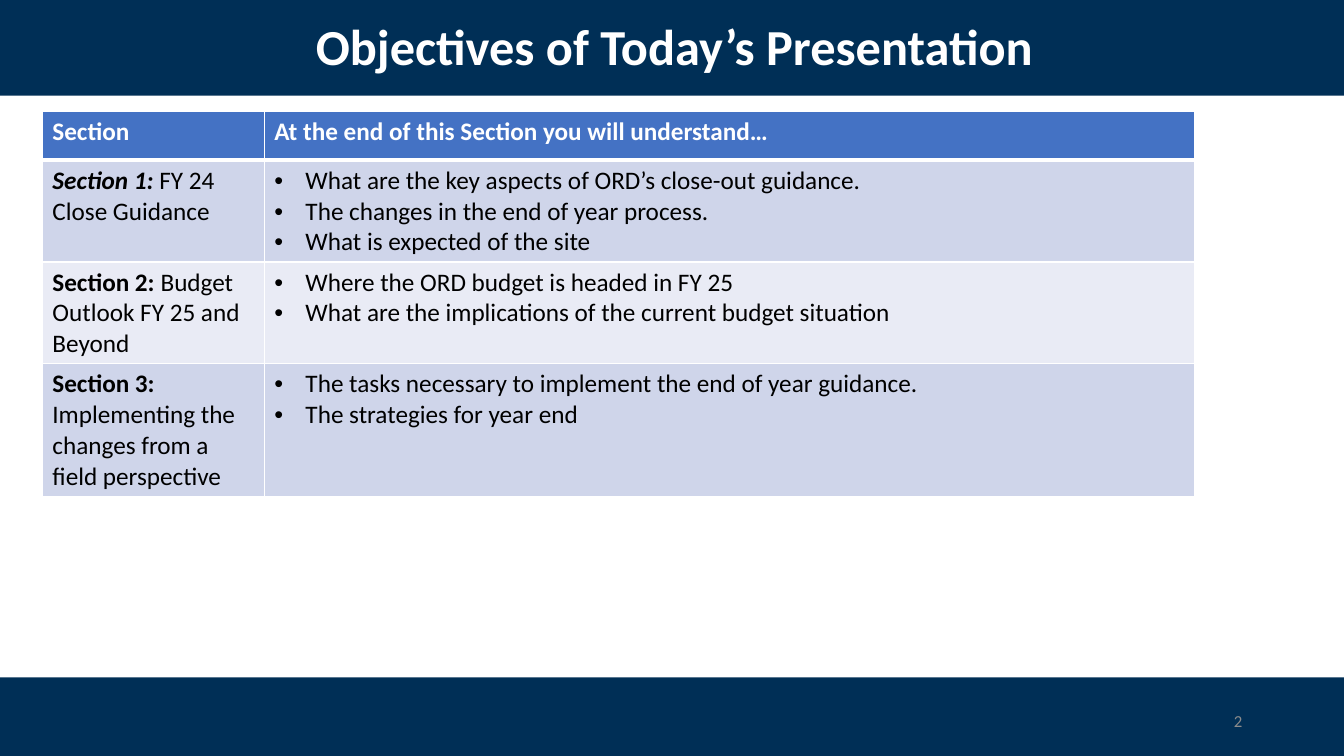
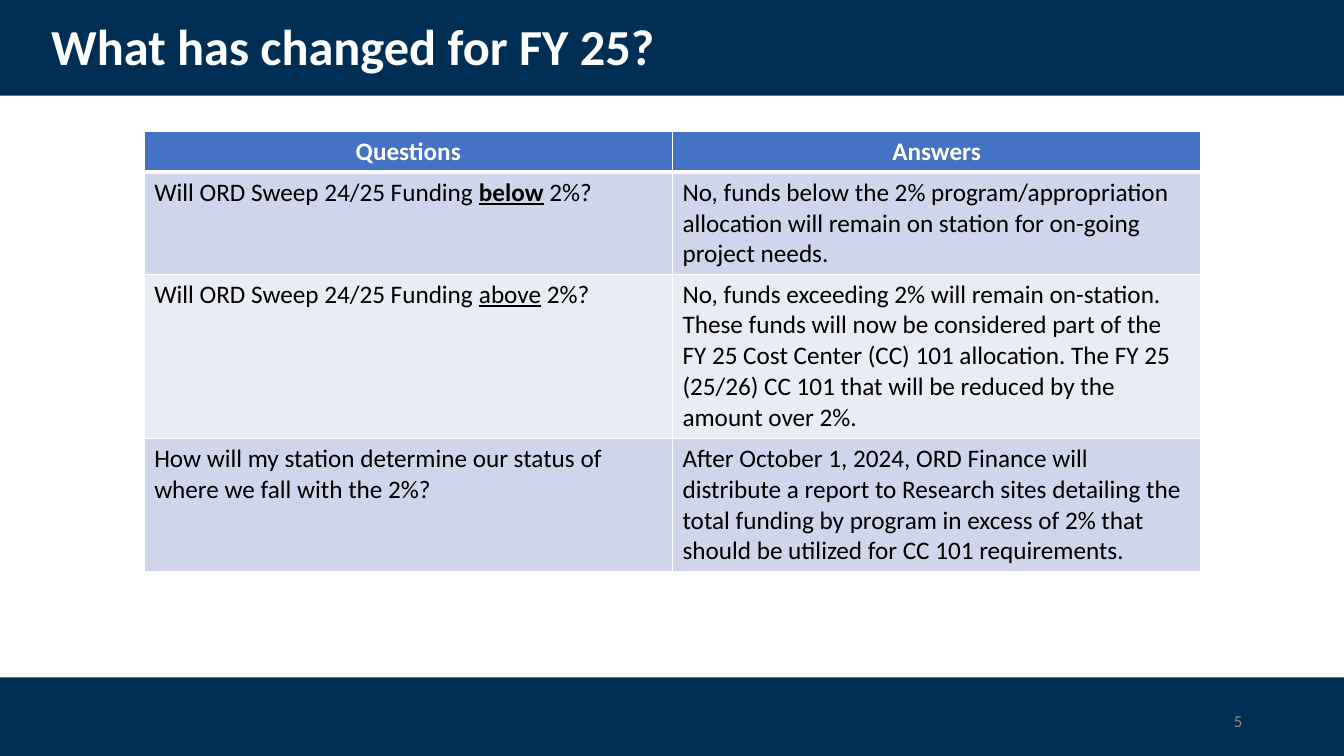
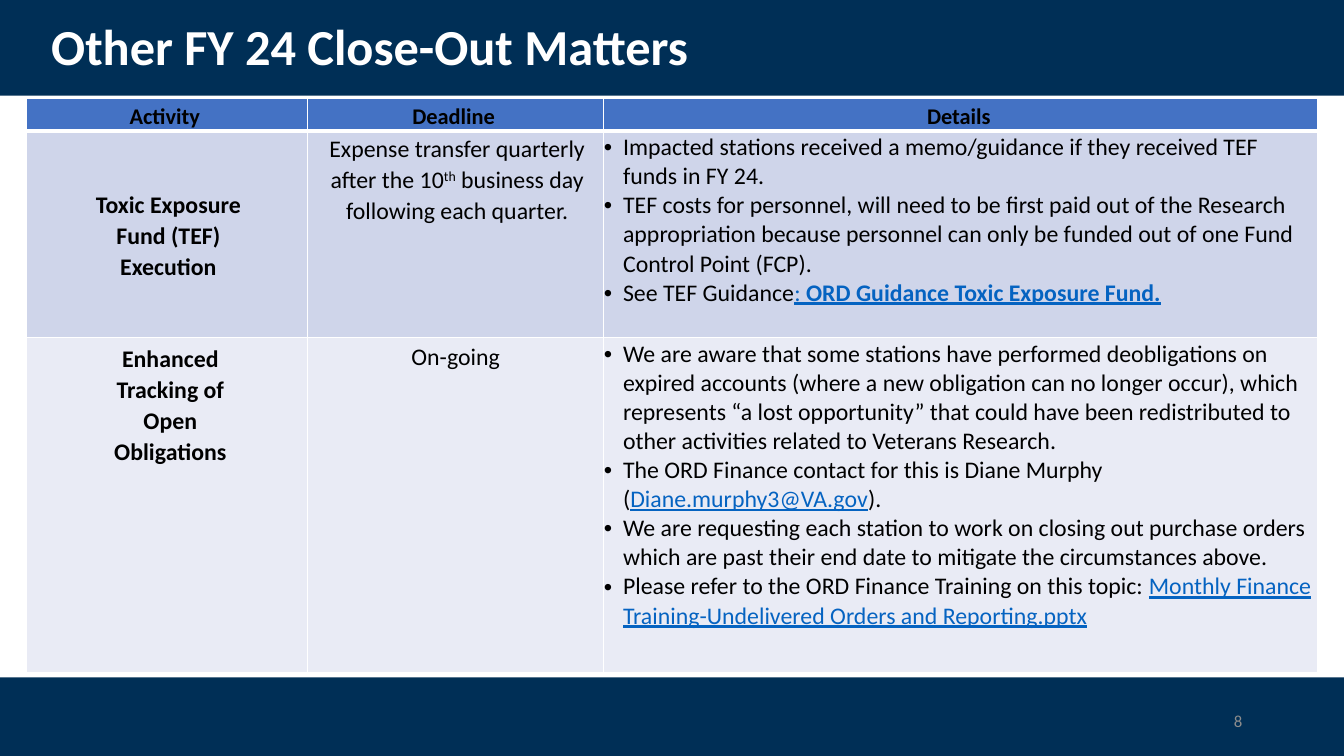
from dataclasses import dataclass, replace

from lxml import etree
from pptx import Presentation
from pptx.dml.color import RGBColor
from pptx.enum.shapes import MSO_SHAPE
from pptx.enum.text import MSO_ANCHOR, PP_ALIGN
from pptx.oxml.ns import qn
from pptx.util import Inches, Pt

RECTANGLE = MSO_SHAPE.RECTANGLE
TOP, MIDDLE = MSO_ANCHOR.TOP, MSO_ANCHOR.MIDDLE
LEFT, CENTER, RIGHT = PP_ALIGN.LEFT, PP_ALIGN.CENTER, PP_ALIGN.RIGHT

NAVY = RGBColor(0x00, 0x2F, 0x56)
HEADER_BLUE = RGBColor(0x44, 0x72, 0xC4)
BAND_DARK = RGBColor(0xCF, 0xD5, 0xEA)
BAND_LIGHT = RGBColor(0xE9, 0xEB, 0xF5)
LINK_BLUE = RGBColor(0x05, 0x63, 0xC1)
GRAY = RGBColor(0x8C, 0x8C, 0x8C)
WHITE = RGBColor(0xFF, 0xFF, 0xFF)
BLACK = RGBColor(0x00, 0x00, 0x00)

FONT = "Calibri"
SLIDE_WIDTH, SLIDE_HEIGHT = 13.33, 7.5
TITLE_BAND = (0, 0, SLIDE_WIDTH, 0.95)
FOOTER_BAND = (0, 6.72, SLIDE_WIDTH, 0.8)
TITLE_BOX = (0.41, 0.15, 12.56, 0.68)
NUMBER_BOX = (9.42, 6.95, 3, 0.4)

BOLD = {"bold": True}
UNDERLINE = {"underline": True}
LINK = {"underline": True, "color": LINK_BLUE}
SUPERSCRIPT = {"baseline": 30}


@dataclass(frozen=True)
class TextStyle:
    size: float = 18
    color: RGBColor = BLACK
    bold: bool = False
    align: PP_ALIGN = LEFT
    anchor: MSO_ANCHOR = TOP
    line_spacing: float = 1.0
    indent: float = 0
    bulleted: bool = False
    margins: tuple = (0.1, 0.05, 0.1, 0.05)


TITLE = TextStyle(36, WHITE, True, anchor=MIDDLE, line_spacing=0.9)
SLIDE_NUMBER = TextStyle(12, GRAY, align=RIGHT, anchor=MIDDLE)
BODY = TextStyle()
BULLETS = TextStyle(indent=0.31, bulleted=True)
HEADER = TextStyle(color=WHITE, bold=True)
TIGHT = (0, 0.02, 0.04, 0)
MATTER_HEADER = TextStyle(16, bold=True, align=CENTER, line_spacing=1.07, margins=TIGHT)
MATTER_ACTIVITY = TextStyle(17, bold=True, align=CENTER, anchor=MIDDLE,
                            line_spacing=1.07, indent=0.07, margins=TIGHT)
MATTER_DEADLINE = replace(MATTER_ACTIVITY, bold=False, anchor=TOP)
MATTER_DETAILS = TextStyle(17, indent=0.19, bulleted=True, margins=TIGHT)


def add_run(paragraph, text, style, changes):
    run = paragraph.add_run()
    run.text = text
    formats = {"name": FONT, "size": Pt(style.size), "bold": style.bold,
               "color": style.color, **changes}
    run.font.color.rgb = formats.pop("color")
    baseline = formats.pop("baseline", None)
    for attribute, value in formats.items():
        setattr(run.font, attribute, value)
    if baseline:
        run.font._element.set("baseline", str(baseline * 1000))


def write_paragraphs(frame, paragraphs, style):
    """Write paragraphs, each a string or a list of strings and (text, changes) runs."""
    for number, runs in enumerate(paragraphs):
        paragraph = frame.paragraphs[0] if number == 0 else frame.add_paragraph()
        properties = paragraph._p.get_or_add_pPr()
        properties.set("marL", str(Inches(style.indent)))
        if style.bulleted:
            properties.set("indent", str(-Inches(style.indent)))
            etree.SubElement(properties, qn("a:buFont"), typeface="Arial")
            etree.SubElement(properties, qn("a:buChar"), char="•")
        paragraph.alignment = style.align
        paragraph.line_spacing = style.line_spacing
        for run in [runs] if isinstance(runs, str) else runs:
            text, changes = (run, {}) if isinstance(run, str) else run
            add_run(paragraph, text, style, changes)


def set_margins(target, margins):
    for side, margin in zip(("left", "top", "right", "bottom"), margins):
        setattr(target, f"margin_{side}", Inches(margin))


def add_text(slide, box, text, style):
    frame = slide.shapes.add_textbox(*map(Inches, box)).text_frame
    frame.word_wrap = True
    frame.vertical_anchor = style.anchor
    set_margins(frame, style.margins)
    write_paragraphs(frame, [text], style)


def add_band(slide, box):
    band = slide.shapes.add_shape(RECTANGLE, *map(Inches, box))
    band.shadow.inherit = False
    band.fill.solid()
    band.fill.fore_color.rgb = NAVY
    band.line.fill.background()


def add_framed_slide(deck, title, number, title_align=LEFT):
    """Add a slide with the shared bands, title and slide number."""
    slide = deck.slides.add_slide(deck.slide_layouts[6])
    for box in (TITLE_BAND, FOOTER_BAND):
        add_band(slide, box)
    add_text(slide, TITLE_BOX, title, replace(TITLE, align=title_align))
    add_text(slide, NUMBER_BOX, str(number), SLIDE_NUMBER)
    return slide


def add_borders(cell, row):
    """Draw white borders, with a heavier rule under the header row."""
    widths = {"L": 1, "R": 1, "T": 3 if row == 1 else 1, "B": 3 if row == 0 else 1}
    properties = cell._tc.get_or_add_tcPr()
    for side, width in widths.items():
        line = etree.SubElement(properties, qn(f"a:ln{side}"), w=str(Pt(width)))
        fill = etree.SubElement(line, qn("a:solidFill"))
        etree.SubElement(fill, qn("a:srgbClr"), val=str(WHITE))


def add_banded_table(slide, position, widths, heights, rows):
    """Add a table from rows of (paragraphs, style) cells."""
    box = (*position, sum(widths), sum(heights))
    table = slide.shapes.add_table(len(rows), len(widths), *map(Inches, box)).table
    table.first_row = table.horz_banding = False
    for column, width in zip(table.columns, widths):
        column.width = Inches(width)
    for index, (cells, height) in enumerate(zip(rows, heights)):
        table.rows[index].height = Inches(height)
        band = BAND_DARK if index % 2 else BAND_LIGHT
        for cell, (paragraphs, style) in zip(table.rows[index].cells, cells):
            add_borders(cell, index)
            cell.fill.solid()
            cell.fill.fore_color.rgb = band if index else HEADER_BLUE
            cell.vertical_anchor = style.anchor
            set_margins(cell, style.margins)
            write_paragraphs(cell.text_frame, paragraphs, style)


def styled_rows(headings, header_style, contents, column_styles):
    """Pair headings and contents with the style of their column."""
    header = [([heading], header_style) for heading in headings]
    return [header] + [list(zip(row, column_styles)) for row in contents]


def add_objectives(deck):
    slide = add_framed_slide(deck, "Objectives of Today’s Presentation", 2, CENTER)
    sections = [
        ([[("Section 1: ", {"bold": True, "italic": True}), "FY 24 Close Guidance"]],
         ["What are the key aspects of ORD’s close-out guidance.",
          "The changes in the end of year process.",
          "What is expected of the site"]),
        ([[("Section 2: ", BOLD), "Budget Outlook FY 25 and Beyond"]],
         ["Where the ORD budget is headed in FY 25",
          "What are the implications of the current budget situation"]),
        ([[("Section 3:", BOLD), " Implementing the changes from a field perspective"]],
         ["The tasks necessary to implement the end of year guidance.",
          "The strategies for year end"]),
    ]
    headings = ["Section", "At the end of this Section you will understand…"]
    add_banded_table(slide, (0.42, 1.11), (2.2, 9.23), (0.48, 1.01, 1.01, 1.32),
                     styled_rows(headings, HEADER, sections, (BODY, BULLETS)))


def add_changes(deck):
    slide = add_framed_slide(deck, "What has changed for FY 25?", 5)
    sweep = "Will ORD Sweep 24/25 Funding "
    answers = [
        ([[sweep, ("below", {**BOLD, **UNDERLINE}), " 2%?"]],
         ["No, funds below the 2% program/appropriation allocation will remain on "
          "station for on-going project needs."]),
        ([[sweep, ("above", UNDERLINE), " 2%?"]],
         ["No, funds exceeding 2% will remain on-station. These funds will now be "
          "considered part of the FY 25 Cost Center (CC) 101 allocation. The FY 25 "
          "(25/26) CC 101 that will be reduced by the amount over 2%."]),
        (["How will my station determine our status of where we fall with the 2%?"],
         ["After October 1, 2024, ORD Finance will distribute a report to Research "
          "sites detailing the total funding by program in excess of 2% that should "
          "be utilized for CC 101 requirements."]),
    ]
    add_banded_table(slide, (1.43, 1.3), (5.24, 5.24), (0.41, 1.01, 1.63, 1.32),
                     styled_rows(["Questions", "Answers"], replace(HEADER, align=CENTER),
                                 answers, (BODY, BODY)))


def add_close_out_matters(deck):
    slide = add_framed_slide(deck, "Other FY 24 Close-Out Matters", 8)
    matters = [
        (["Toxic Exposure", "Fund (TEF)", "Execution"],
         [["Expense transfer quarterly after the 10", ("th", SUPERSCRIPT),
           " business day following each quarter."]],
         ["Impacted stations received a memo/guidance if they received TEF funds "
          "in FY 24.",
          "TEF costs for personnel, will need to be first paid out of the Research "
          "appropriation because personnel can only be funded out of one Fund "
          "Control Point (FCP).",
          ["See TEF Guidance", (": ", LINK),
           ("ORD Guidance Toxic Exposure Fund.", {**LINK, **BOLD})]]),
        (["Enhanced", "Tracking of", "Open", "Obligations"],
         ["On-going"],
         ["We are aware that some stations have performed deobligations on expired "
          "accounts (where a new obligation can no longer occur), which represents "
          "“a lost opportunity” that could have been redistributed to other "
          "activities related to Veterans Research.",
          ["The ORD Finance contact for this is Diane Murphy (",
           ("Diane.murphy3@VA.gov", LINK), ")."],
          "We are requesting each station to work on closing out purchase orders "
          "which are past their end date to mitigate the circumstances above.",
          ["Please refer to the ORD Finance Training on this topic: ",
           ("Monthly Finance Training-Undelivered Orders and Reporting.pptx", LINK)]]),
    ]
    rows = styled_rows(["Activity", "Deadline", "Details"], MATTER_HEADER, matters,
                       (MATTER_ACTIVITY, MATTER_DEADLINE, MATTER_DETAILS))
    obligations, ongoing, _ = rows[2]
    rows[2][0] = (obligations[0], replace(MATTER_ACTIVITY, anchor=TOP, margins=BODY.margins))
    rows[2][1] = (ongoing[0], replace(BODY, size=17, align=CENTER))
    add_banded_table(slide, (0.26, 0.98), (2.79, 2.94, 7.08), (0.32, 2.05, 3.32), rows)


def main():
    deck = Presentation()
    deck.slide_width, deck.slide_height = Inches(SLIDE_WIDTH), Inches(SLIDE_HEIGHT)
    add_objectives(deck)
    add_changes(deck)
    add_close_out_matters(deck)
    deck.save("out.pptx")


if __name__ == "__main__":
    main()
